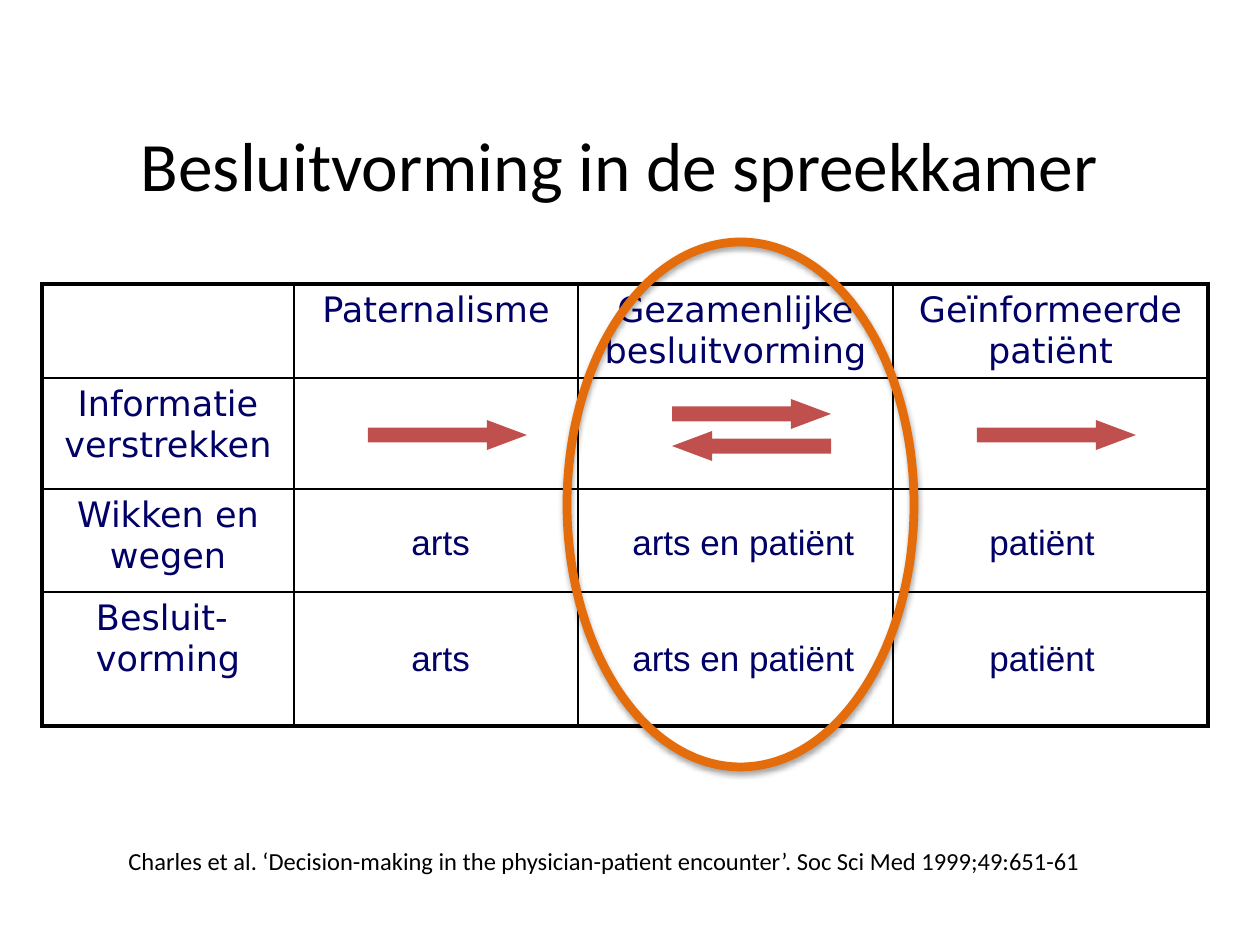
from pptx import Presentation
from pptx.dml.color import RGBColor
from pptx.enum.shapes import MSO_SHAPE as Shape
from pptx.enum.text import MSO_ANCHOR as Anchor, MSO_AUTO_SIZE as Fit, PP_ALIGN as Align
from pptx.oxml import parse_xml
from pptx.oxml.ns import nsdecls
from pptx.util import Pt

COLS = {"ink": "000000", "navy": "000066", "red": "C0504D", "ring": "E46C0A"}


def px(n):
    return round(n * 914400 / 126)


def write(par, text, size, font, col):
    run = par.add_run()
    run.text = text
    run.font.size = Pt(size)
    run.font.name = font
    run.font.color.rgb = RGBColor.from_string(COLS[col])


prs = Presentation()
prs.slide_width, prs.slide_height = px(1260), px(945)
slide = prs.slides.add_slide(prs.slide_layouts[5])
shapes = slide.shapes

# Title
title = shapes.title
title.left, title.top, title.width, title.height = px(84), px(84), px(1071), px(160)
frame = title.text_frame
frame.vertical_anchor = Anchor.MIDDLE
frame.paragraphs[0].alignment = Align.CENTER
write(frame.paragraphs[0], "Besluitvorming in de spreekkamer", 39.6, "Calibri", "ink")

# Table
heads = ["", "Paternalisme", "Gezamenlijke besluitvorming", "Geïnformeerde patiënt"]
sides = ["Informatie verstrekken", "Wikken en wegen", "Besluit-\vvorming"]
wides, highs = [252, 284, 315, 315], [93, 111, 103, 134]
table = shapes.add_table(4, 4, px(42), px(284), px(sum(wides)), px(sum(highs))).table
table.first_row = table.horz_banding = False
for col, wide in zip(table.columns, wides):
    col.width = px(wide)
for r, high in enumerate(highs):
    table.rows[r].height = px(high)
    for c in range(4):
        cell = table.cell(r, c)
        cell.fill.background()
        text = heads[c] if r == 0 else sides[r - 1] if c == 0 else ""
        par = cell.text_frame.paragraphs[0]
        par.alignment = Align.CENTER
        if "\v" in text:  # split word, set flush left
            par.alignment = Align.LEFT
            cell.margin_left = px(54)
        for i, part in enumerate(text.split("\v")):
            if i:
                par.add_line_break()
            if part:
                write(par, part, 20, "DejaVu Sans", "navy")
        # Thick outer frame, thin inner lines
        outer = {"L": c == 0, "R": c == 3, "T": r == 0, "B": r == 3}
        props = cell._tc.get_or_add_tcPr()
        for i, (side, thick) in enumerate(outer.items()):
            width = Pt(2.25 if thick else 1)
            props.insert(i, parse_xml(
                f'<a:ln{side} {nsdecls("a")} w="{width}"><a:solidFill>'
                f'<a:srgbClr val="{COLS["ink"]}"/></a:solidFill></a:ln{side}>'))

# Source and answers
notes = [(116, 840, 1062, 43, 14, "Calibri", "ink",
          "Charles et al. ‘Decision-making in the physician-patient encounter’. "
          "Soc Sci Med 1999;49:651-61")]
for y in (514, 630):
    for x, wide, text in ((399, 84, "arts"), (620, 318, "arts en patiënt"),
                          (977, 168, "patiënt")):
        notes.append((x, y, wide, 55, 20, "Arial", "navy", text))
for x, y, wide, high, size, font, col, text in notes:
    frame = shapes.add_textbox(px(x), px(y), px(wide), px(high)).text_frame
    frame.word_wrap = True
    frame.auto_size = Fit.SHAPE_TO_FIT_TEXT
    write(frame.paragraphs[0], text, size, font, col)

# Arrows: who informs whom
for x, y, turn in ((368, 420, 0), (977, 420, 0), (672, 431, 180), (672, 399, 0)):
    arrow = shapes.add_shape(Shape.RIGHT_ARROW, px(x), px(y), px(159), px(30))
    arrow.adjustments[0], arrow.adjustments[1] = 0.5, 1.335
    arrow.rotation = turn
    arrow.shadow.inherit = False
    arrow.fill.solid()
    arrow.fill.fore_color.rgb = RGBColor.from_string(COLS["red"])
    arrow.line.fill.background()

# Ring around shared decisions, with a soft shadow
ring = shapes.add_shape(Shape.OVAL, px(567), px(242), px(347), px(525))
ring.fill.background()
ring.line.color.rgb = RGBColor.from_string(COLS["ring"])
ring.line.width = Pt(5)
ring.shadow.inherit = False
ring._element.spPr.find("{*}effectLst").append(parse_xml(
    f'<a:outerShdw {nsdecls("a")} blurRad="{Pt(3.1)}" dist="{Pt(1.8)}" dir="5400000" '
    f'rotWithShape="0"><a:srgbClr val="{COLS["ink"]}"><a:alpha val="35000"/>'
    '</a:srgbClr></a:outerShdw>'))

prs.save("out.pptx")
